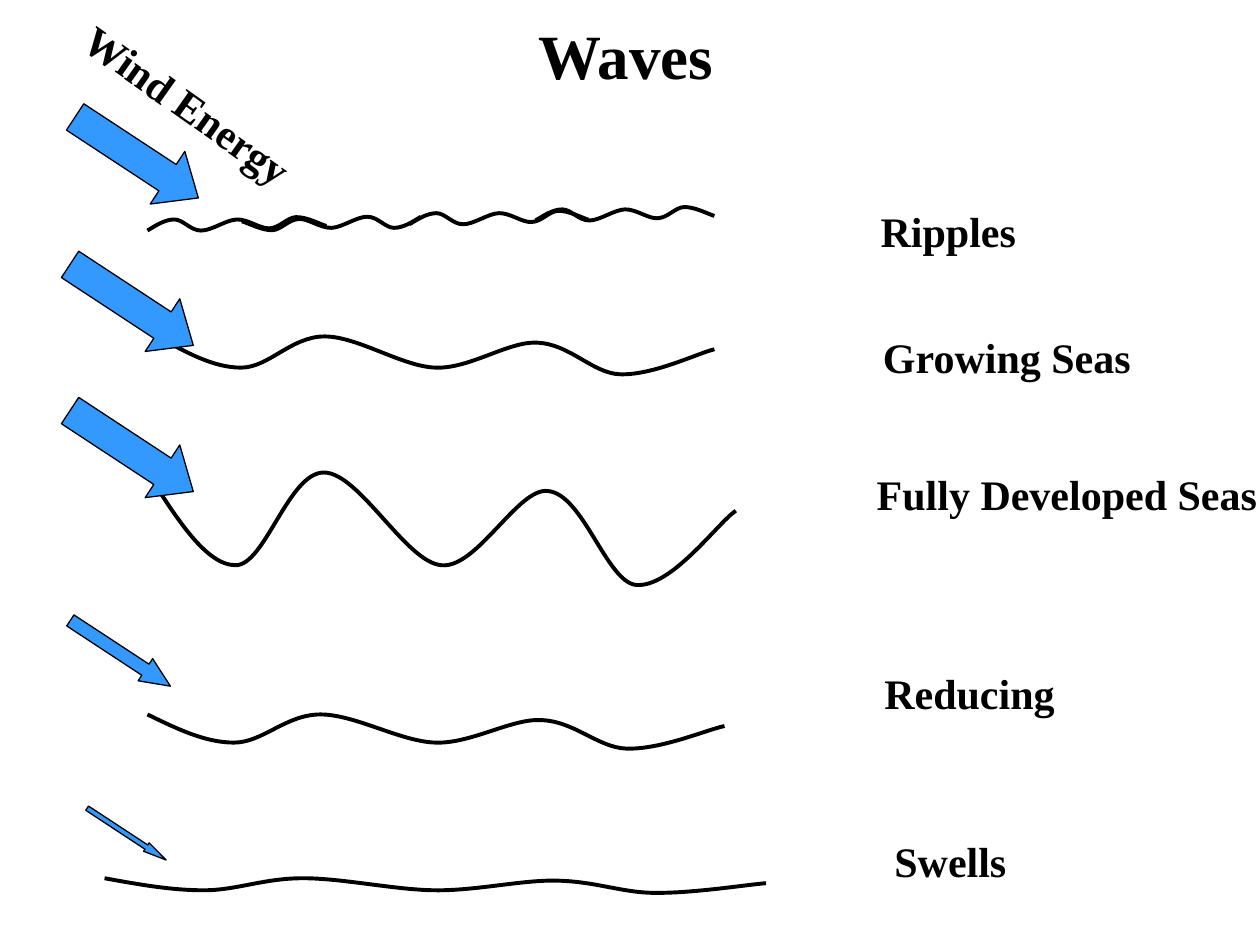
"""Build a slide showing how wind energy raises ripples, seas and swells."""
from lxml import etree
from pptx import Presentation
from pptx.dml.color import RGBColor
from pptx.enum.shapes import MSO_SHAPE
from pptx.enum.text import MSO_ANCHOR, MSO_AUTO_SIZE, PP_ALIGN
from pptx.oxml.ns import qn
from pptx.util import Inches, Pt

BLACK = RGBColor(0x00, 0x00, 0x00)
BLUE = RGBColor(0x33, 0x99, 0xFF)

PROFILE = [
    (0, 0), (0.05, 0.4), (0.1, 0.8), (0.15, 0.8), (0.2, 0.8), (0.24, 0), (0.3, 0),
    (0.36, 0), (0.44, 0.78), (0.5, 0.8), (0.56, 0.83), (0.63, 0.13), (0.68, 0.16),
    (0.74, 0.18), (0.78, 0.94), (0.83, 0.97), (0.89, 1), (0.97, 0.43), (1, 0.33),
]


def write(box, wording, size):
    frame = box.text_frame
    settings = {
        "text": wording,
        "word_wrap": False,
        "auto_size": MSO_AUTO_SIZE.SHAPE_TO_FIT_TEXT,
        "vertical_anchor": MSO_ANCHOR.TOP,
    }
    for name, value in settings.items():
        setattr(frame, name, value)
    para = frame.paragraphs[0]
    para.alignment = PP_ALIGN.LEFT
    font = para.runs[0].font
    for name, value in {"name": "Times New Roman", "size": Pt(size), "bold": True}.items():
        setattr(font, name, value)
    font.color.rgb = BLACK


def draw_wave(shapes, left, top, width, height, crest_first=False, rotation=0):
    points = [
        (Inches(left + x * width), Inches(top + (1 - y if crest_first else y) * height))
        for x, y in PROFILE
    ]
    builder = shapes.build_freeform(*points[0])
    builder.add_line_segments(points[1:], close=False)
    wave = builder.convert_to_shape()
    wave.shadow.inherit = False
    wave.fill.background()
    wave.line.color.rgb = BLACK
    wave.line.width = Pt(2.25)
    wave.rotation = rotation
    outline = next(wave.element.iter(qn("a:path")))
    steps = outline.findall(qn("a:lnTo"))
    for first in range(0, len(steps), 3):
        curve = etree.SubElement(outline, qn("a:cubicBezTo"))
        for step in steps[first:first + 3]:
            curve.append(step[0])
            outline.remove(step)


deck = Presentation()
deck.slide_width, deck.slide_height = Inches(10), Inches(7.5)
page = deck.slides.add_slide(deck.slide_layouts[5])
shapes = page.shapes

title = shapes.title
title.left, title.top, title.width, title.height = map(Inches, (4.17, 0.08, 1.62, 0.7))
write(title, "Waves", 36)

for left, top, rotation in [(1.17, 1.72, 0), (1.92, 1.72, 180), (3.25, 1.67, 0), (4.25, 1.64, 0)]:
    draw_wave(shapes, left, top, 1.42, 0.11, crest_first=True, rotation=rotation)

seas = [
    (1.25, 2.67, 4.42, 0.31),
    (1.17, 3.75, 4.67, 0.92),
    (1.17, 5.67, 4.58, 0.28),
    (0.83, 6.97, 5.25, 0.12),
]
for sea in seas:
    draw_wave(shapes, *sea)

winds = [
    (0.5, 1, 1.17, 0.5),
    (0.46, 2.17, 1.17, 0.5),
    (0.46, 3.33, 1.17, 0.5),
    (0.48, 5.08, 0.95, 0.21),
    (0.63, 6.58, 0.75, 0.08),
]
for left, top, width, height in winds:
    arrow = shapes.add_shape(MSO_SHAPE.RIGHT_ARROW, *map(Inches, (left, top, width, height)))
    arrow.adjustments[0] = 0.5
    arrow.adjustments[1] = width / height / 4
    arrow.rotation = 33.3
    arrow.shadow.inherit = False
    arrow.fill.solid()
    arrow.fill.fore_color.rgb = BLUE
    arrow.line.color.rgb = BLACK
    arrow.line.width = Pt(0.75)

labels = [
    ("Wind Energy", 0.44, 0.58, 2.12, 35.3),
    ("Ripples", 6.89, 1.58, 1.28, 0),
    ("Growing Seas", 6.91, 2.58, 2.17, 0),
    ("Fully Developed Seas", 6.86, 3.67, 3.22, 0),
    ("Reducing", 6.92, 5.25, 1.55, 0),
    ("Swells", 7, 6.58, 1.09, 0),
]
for wording, left, top, width, rotation in labels:
    box = shapes.add_textbox(*map(Inches, (left, top, width, 0.5)))
    box.rotation = rotation
    write(box, wording, 24)

deck.save("out.pptx")
